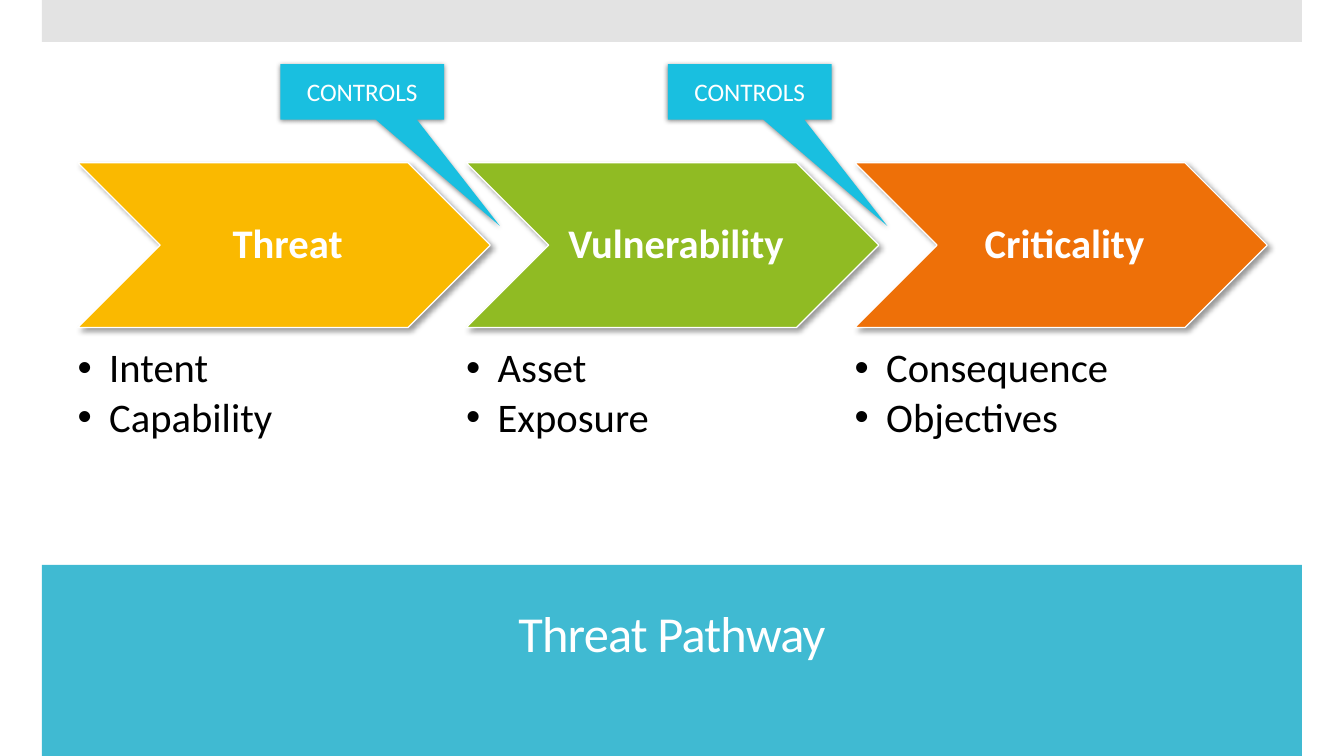
from lxml.etree import SubElement
from pptx import Presentation
from pptx.dml.color import RGBColor
from pptx.enum.shapes import MSO_SHAPE
from pptx.enum.text import MSO_ANCHOR, PP_ALIGN
from pptx.oxml.ns import qn
from pptx.util import Pt

PX = 9525
CHEVRON_SHADE = {"blurRad": 4, "dist": 3, "deg": 45, "alpha": 40}
CALL_SHADE = {"blurRad": 3.5, "dist": 1.1, "deg": 90, "alpha": 45}
STAGES = [
    ("Threat", "FAB900", ["Intent", "Capability"]),
    ("Vulnerability", "90BB23", ["Asset", "Exposure"]),
    ("Criticality", "EE7008", ["Consequence", "Objectives"]),
]


def color(code):
    return RGBColor.from_string(code)


def scale(box):
    return [n * PX for n in box]


def style(item, form):
    for name, value in form.items():
        setattr(item, name, value)


def fade(fill, alpha):
    tone = fill._xPr.find(qn("a:solidFill"))[0]
    SubElement(tone, qn("a:alpha"), val=str(alpha * 1000))


def shade(shape, form):
    effects = shape._element.spPr.find(qn("a:effectLst"))
    outer = SubElement(
        effects, qn("a:outerShdw"),
        blurRad=str(Pt(form["blurRad"])), dist=str(Pt(form["dist"])),
        dir=str(form["deg"] * 60000), algn="ctr", rotWithShape="0")
    tone = SubElement(outer, qn("a:srgbClr"), val="000000")
    SubElement(tone, qn("a:alpha"), val=str(form["alpha"] * 1000))


def draw(slide, kind, box, fill, line=None):
    shape = slide.shapes.add_shape(kind, *scale(box))
    shape.shadow.inherit = False
    shape.fill.solid()
    shape.fill.fore_color.rgb = color(fill)
    if line:
        shape.line.color.rgb = color(line)
        shape.line.width = Pt(0.85)
    else:
        shape.line.fill.background()
    return shape


def write(shape, lines, font, para, frame):
    text = shape.text_frame
    style(text, {"word_wrap": True, **frame})
    text.text = "\n".join(lines)
    for part in text.paragraphs:
        style(part, para)
        run = part.runs[0]
        style(run.font, {"name": "Calibri", **font})
    return text


def label(slide, box, lines, font, para, frame, tone="FFFFFF"):
    text = write(slide.shapes.add_textbox(*scale(box)), lines, font, para, frame)
    for part in text.paragraphs:
        part.runs[0].font.color.rgb = color(tone)
    return text


def bands(slide, box):
    """Grey strip on top, blue title band at the foot."""
    x, y, w, h = box
    strip = draw(slide, MSO_SHAPE.RECTANGLE, (x, y, w, 40), "C8C8C8")
    fade(strip.fill, 50)
    draw(slide, MSO_SHAPE.RECTANGLE, (x, y + h - 182, w, 182), "40BAD2")
    title = label(
        slide, (x + 27, y + h - 168, w - 54, 108), ["Threat Pathway"],
        {"size": Pt(36)}, {"alignment": PP_ALIGN.CENTER, "line_spacing": 0.9},
        {"vertical_anchor": MSO_ANCHOR.MIDDLE})
    title.paragraphs[0].runs[0].font._element.set("spc", "-60")


def stage(slide, box, name, fill, points):
    """Chevron with its name, and bullets below."""
    x, y, w, h = box
    arrow = draw(slide, MSO_SHAPE.CHEVRON, box, fill, "FFFFFF")
    shade(arrow, CHEVRON_SHADE)
    label(
        slide, (x + h // 2, y, w - h, h), [name],
        {"size": Pt(29), "bold": True},
        {"alignment": PP_ALIGN.CENTER, "line_spacing": 0.9},
        {"vertical_anchor": MSO_ANCHOR.MIDDLE, "margin_left": 12 * PX,
         "margin_right": 4 * PX, "margin_top": 4 * PX, "margin_bottom": 4 * PX})
    sides = ("left", "right", "top", "bottom")
    text = label(
        slide, (x, y + 176, w - h // 2, 92), points, {"size": Pt(29)},
        {"line_spacing": 0.9, "space_after": Pt(4.35)},
        {f"margin_{side}": 0 for side in sides}, "000000")
    for part in text.paragraphs:
        props = part._p.get_or_add_pPr()
        props.set("marL", str(30 * PX))
        props.set("indent", str(-30 * PX))
        SubElement(props, qn("a:buFont"), typeface="Arial")
        SubElement(props, qn("a:buChar"), char="•")


def control(slide, box):
    """Callout that points into the gap between two stages."""
    call = draw(slide, MSO_SHAPE.RECTANGULAR_CALLOUT, box, "19BFE0")
    call.adjustments[0] = 0.84
    call.adjustments[1] = 2.41
    shade(call, CALL_SHADE)
    text = write(
        call, ["CONTROLS"], {"size": Pt(18)}, {"alignment": PP_ALIGN.CENTER},
        {"vertical_anchor": MSO_ANCHOR.MIDDLE})
    text.paragraphs[0].runs[0].font.color.rgb = color("FFFFFF")


def main():
    deck = Presentation()
    style(deck, {"slide_width": 1280 * PX, "slide_height": 720 * PX})
    slide = deck.slides.add_slide(deck.slide_layouts[6])
    bands(slide, (40, 0, 1200, 720))
    for i, (name, fill, points) in enumerate(STAGES):
        stage(slide, (74 + 370 * i, 155, 393, 157), name, fill, points)
    for i in range(2):
        control(slide, (267 + 369 * i, 61, 156, 53))
    deck.save("out.pptx")


if __name__ == "__main__":
    main()
